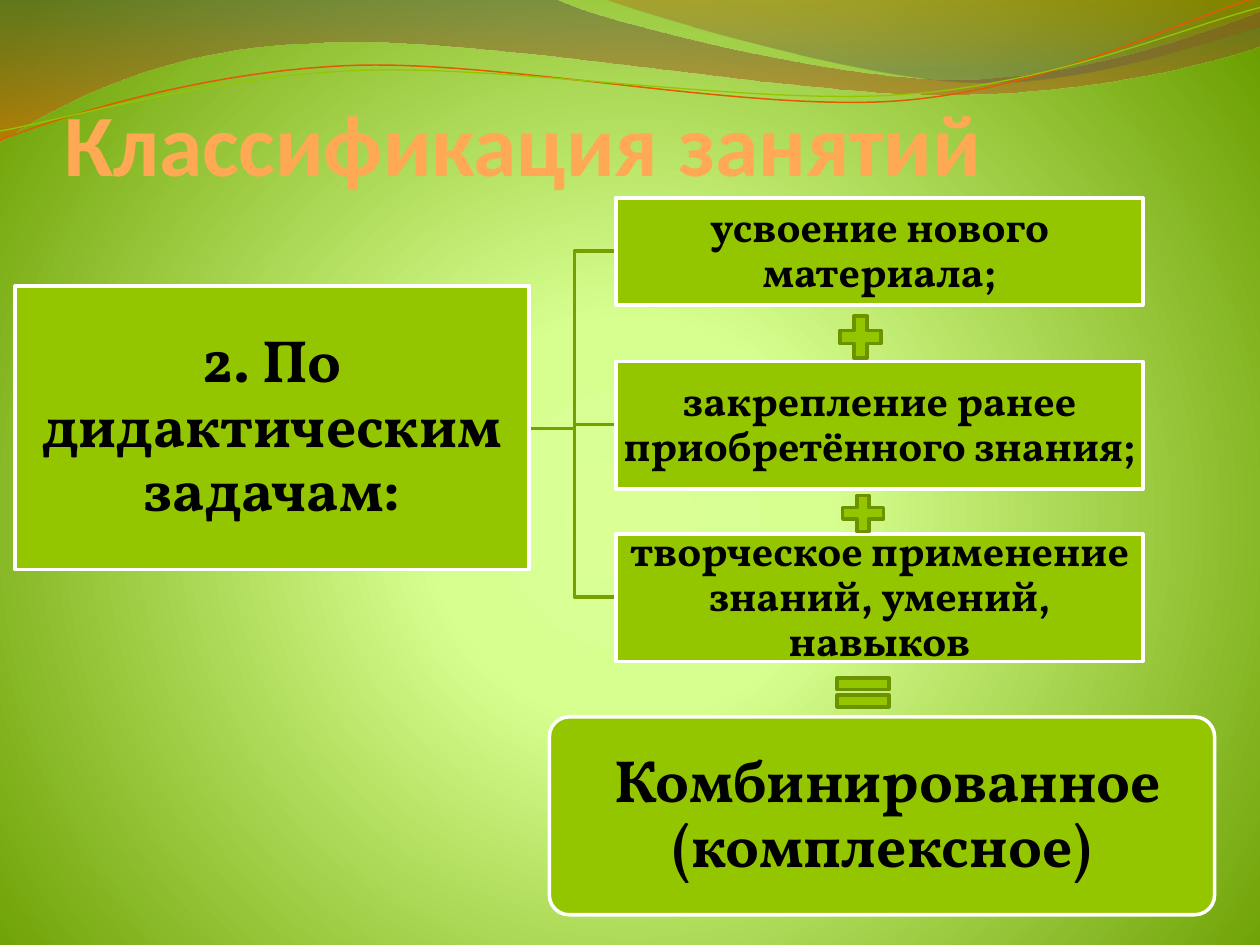
"""Builds a slide that classifies lessons by didactic task."""
import math

import pptx
import pptx.util
import pptx.oxml
import pptx.oxml.ns
import pptx.dml.color
import pptx.enum.shapes
import pptx.enum.text

COLORS = {
    "lime": "94C600", "edge": "6D9200", "link": "779F00", "white": "FFFFFF",
    "black": "000000", "title": "FFA954", "red": "E15B00",
}
RGB = {k: pptx.dml.color.RGBColor.from_string(v) for k, v in COLORS.items()}
MSO = pptx.enum.shapes.MSO_SHAPE
qn = pptx.oxml.ns.qn

prs = pptx.Presentation()
prs.slide_width, prs.slide_height = pptx.util.Inches(10), pptx.util.Inches(7.5)
COL, ROW = prs.slide_width / 10, prs.slide_height / 7.5
s = prs.slides.add_slide(prs.slide_layouts[5])


def set_gradient(element, stops, direction):
    grad = element.find(".//" + qn("a:gradFill"))
    grad.clear()
    gs = "".join(
        f'<a:gs pos="{pos * 1000}"><a:srgbClr val="{color}">'
        f'<a:alpha val="{alpha * 1000}"/></a:srgbClr></a:gs>'
        for pos, color, alpha in stops)
    ns = pptx.oxml.ns.nsdecls("a")
    for child in pptx.oxml.parse_xml(f"<a:x {ns}><a:gsLst>{gs}</a:gsLst>{direction}</a:x>"):
        grad.append(child)


def add_box(kind, grid, line, text="", size=24, inset=0.02):
    x, y, w, h = grid
    sp = s.shapes.add_shape(kind, int(x * COL), int(y * ROW), int(w * COL), int(h * ROW))
    sp.shadow.inherit = False
    sp.fill.solid()
    sp.fill.fore_color.rgb = RGB["lime"]
    sp.line.color.rgb = RGB[line]
    sp.line.width = pptx.util.Pt(2)
    if text:
        tf = sp.text_frame
        tf.word_wrap = True
        tf.vertical_anchor = pptx.enum.text.MSO_ANCHOR.MIDDLE
        tf.margin_left = tf.margin_right = pptx.util.Inches(inset)
        tf.margin_top = tf.margin_bottom = pptx.util.Inches(inset)
        p = tf.paragraphs[0]
        p.text = text
        p.alignment = pptx.enum.text.PP_ALIGN.CENTER
        p.line_spacing = 0.9
        p.font.name, p.font.size, p.font.bold = "Vollkorn", pptx.util.Pt(size), True
        p.font.color.rgb = RGB["black"]
    return sp


s.background.fill.gradient()
set_gradient(
    s.element, [(0, "D9FF95", 100), (25, "D7FF90", 100), (100, "6B9F00", 100)],
    '<a:path path="circle"><a:fillToRect l="10000" t="110000" r="10000" b="100000"/></a:path>')

title = s.shapes.title
title.left, title.top = int(0.51 * COL), int(0.29 * ROW)
title.width, title.height = int(9 * COL), int(1.25 * ROW)
tf = title.text_frame
tf.auto_size = pptx.enum.text.MSO_AUTO_SIZE.NONE
tf.vertical_anchor = pptx.enum.text.MSO_ANCHOR.BOTTOM
tf.margin_left = tf.margin_right = tf.margin_bottom = 0
p = tf.paragraphs[0]
p.text = "Классификация занятий"
p.alignment = pptx.enum.text.PP_ALIGN.LEFT
p.font.name, p.font.size, p.font.bold = "Calibri", pptx.util.Pt(50), True
p.font.color.rgb = RGB["title"]

TILT = 2.7
outlines = [
    ([(0, 0), (4.4, -0.01), (4.76, 0.17, 6.64, 0.63, 7.58, 0.63),
      (8.53, 0.63, 9.58, 0.26, 10, 0.09), (10.01, 0.36),
      (9.83, 0.44, 8.7, 0.76, 7.46, 0.75), (6.22, 0.75, 3.82, 0.28, 2.57, 0.34),
      (1.29, 0.36, 0.46, 0.83, -0.01, 1.13)],
     [(0, "554D41", 45), (100, "E75D00", 55)], None, 0, None),
    ([(4.79, -0.01), (5.09, 0.11, 6.82, 0.62, 7.69, 0.65),
      (8.56, 0.69, 9.61, 0.32, 10, 0.21), (10, 0)],
     [(0, "BD4C00", 30), (80, "685D4B", 45)], None, 0, None),
    ([(0, 1.11), (0.48, 0.93, 1.58, 0.57, 2.77, 0.52),
      (3.95, 0.47, 5.93, 0.89, 7.13, 0.8), (8.33, 0.71, 9.38, 0.15, 9.98, -0.02)],
     None, "red", 0.85, (4.99, 0.58)),
    ([(0, 1.04), (0.47, 0.96, 1.64, 0.61, 2.83, 0.56),
      (4.03, 0.51, 5.97, 0.84, 7.17, 0.75), (8.36, 0.67, 9.41, 0.21, 10, 0.06)],
     None, "lime", 0.75, (5, 0.59)),
]
for y in (4.74, 3.37, 1.99):
    outlines.append(([(4.19, 3.4), (4.56, 3.4), (4.56, y), (4.89, y)],
                     None, "link", 2, None))

for segments, stops, line, width, pivot in outlines:
    pts = [pt for seg in segments for pt in zip(seg[::2], seg[1::2])]
    if pivot:
        cx, cy = pivot
        sin, cos = math.sin(math.radians(TILT)), math.cos(math.radians(TILT))
        pts = [(cx + (x - cx) * cos - (y - cy) * sin,
                cy + (x - cx) * sin + (y - cy) * cos) for x, y in pts]
    emu = [(int(x * COL), int(y * ROW)) for x, y in pts]
    builder = s.shapes.build_freeform(*emu[0])
    builder.add_line_segments(emu[1:], close=bool(stops))
    sp = builder.convert_to_shape()
    sp.shadow.inherit = False
    lines = iter(sp.element.findall(".//" + qn("a:lnTo")))
    for seg in segments[1:]:
        first = next(lines)
        if len(seg) == 6:
            curve = first.makeelement(qn("a:cubicBezTo"))
            first.addprevious(curve)
            for ln in (first, next(lines), next(lines)):
                curve.append(ln[0])
                ln.getparent().remove(ln)
    if stops:
        sp.fill.gradient()
        set_gradient(sp.element, stops, '<a:lin ang="5400000" scaled="0"/>')
        sp.line.fill.background()
    else:
        sp.fill.background()
        sp.line.color.rgb = RGB[line]
        sp.line.width = pptx.util.Pt(width)
    if pivot:
        sp.rotation = 360 - TILT

add_box(MSO.RECTANGLE, (0.12, 2.27, 4.08, 2.25), "white",
        "2. По дидактическим задачам:", 34)
tasks = [
    (1.57, 0.85, "усвоение нового материала;"),
    (2.87, 1.01, "закрепление ранее приобретённого знания;"),
    (4.24, 1.01, "творческое применение знаний, умений, навыков"),
]
for top, height, text in tasks:
    add_box(MSO.RECTANGLE, (4.89, top, 4.18, height), "white", text)

result = add_box(MSO.ROUNDED_RECTANGLE, (4.36, 5.69, 5.28, 1.57), "white",
                 " Комбинированное (комплексное)", 34, 0.14)
result.adjustments[0] = 0.1

signs = [
    (MSO.MATH_PLUS, (6.61, 2.45, 0.44, 0.45)),
    (MSO.MATH_PLUS, (6.63, 3.88, 0.44, 0.39)),
    (MSO.MATH_EQUAL, (6.57, 5.3, 0.56, 0.39)),
]
for kind, grid in signs:
    add_box(kind, grid, "edge")

prs.save("out.pptx")
